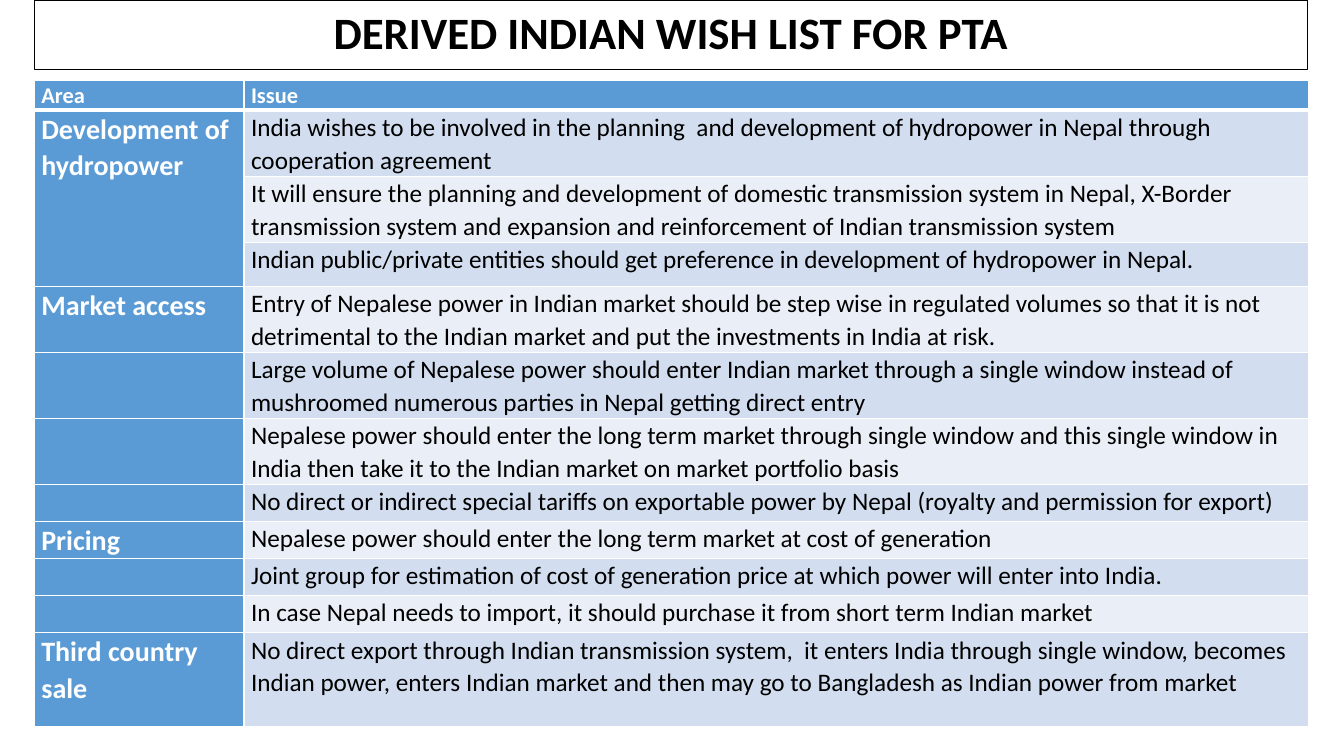
from lxml import etree
from pptx import Presentation
from pptx import util as u
from pptx.dml.color import RGBColor
from pptx.enum import shapes, text
from pptx.oxml import ns

WISHES = [
    ("Development of\nhydropower", [
        "India wishes to be involved in the planning  and development of hydropower in Nepal "
        "through cooperation agreement",
        "It will ensure the planning and development of domestic transmission system in Nepal, "
        "X-Border transmission system and expansion and reinforcement of Indian transmission system",
        "Indian public/private entities should get preference in development of hydropower in Nepal.",
    ]),
    ("Market access", [
        "Entry of Nepalese power in Indian market should be step wise in regulated volumes so that "
        "it is not detrimental to the Indian market and put the investments in India at risk.",
        "Large volume of Nepalese power should enter Indian market through a single window instead "
        "of mushroomed numerous parties in Nepal getting direct entry",
        "Nepalese power should enter the long term market through single window and this single "
        "window in India then take it to the Indian market on market portfolio basis",
        "No direct or indirect special tariffs on exportable power by Nepal "
        "(royalty and permission for export)",
    ]),
    ("Pricing", [
        "Nepalese power should enter the long term market at cost of generation",
        "Joint group for estimation of cost of generation price at which power will enter into India.",
        "In case Nepal needs to import, it should purchase it from short term Indian market",
    ]),
    ("Third country sale", [
        "No direct export through Indian transmission system,  it enters India through single window, "
        "becomes Indian power, enters Indian market and then may go to Bangladesh as Indian power "
        "from market",
    ]),
]
MERGED_AREA = WISHES[0][0]
COLUMN_WIDTHS = [2.08, 10.56]
ROW_HEIGHTS = [0.28, 0.66, 0.65, 0.44, 0.65, 0.65, 0.66, 0.36, 0.37, 0.37, 0.37, 0.93]
BLUE, BANDS = "5B9BD5", ["D2DEEF", "EAEFF7"]
WHITE, BLACK = "FFFFFF", "000000"


def rgb(value):
    return RGBColor.from_string(value)


class WishListSlide:
    font_name = "Calibri"
    cell_format = {
        "margin_left": u.Inches(0.07), "margin_right": u.Inches(0.07),
        "margin_top": 0, "margin_bottom": 0,
    }
    heading_format = {"size": u.Pt(16), "bold": True}
    area_format = {"size": u.Pt(20), "bold": True}
    issue_format = {"size": u.Pt(18), "bold": False}
    title_format = {"size": u.Pt(32), "bold": True}

    def __init__(self, deck):
        self.slide = deck.slides.add_slide(deck.slide_layouts[6])

    def set_words(self, frame, words, color, font_format, spacing, align=text.PP_ALIGN.LEFT):
        frame.text = words
        for paragraph in frame.paragraphs:
            paragraph.line_spacing = spacing
            paragraph.alignment = align
            for run in paragraph.runs:
                run.font.name = self.font_name
                run.font.color.rgb = rgb(color)
                for name, value in font_format.items():
                    setattr(run.font, name, value)

    def title(self, words, left, top, width, height):
        banner = self.slide.shapes.add_shape(
            shapes.MSO_SHAPE.RECTANGLE, *map(u.Inches, (left, top, width, height)))
        banner.shadow.inherit = False
        banner.fill.background()
        banner.line.color.rgb = rgb(BLACK)
        banner.line.width = u.Pt(0.75)
        banner.text_frame.vertical_anchor = text.MSO_ANCHOR.MIDDLE
        self.set_words(banner.text_frame, words, BLACK, self.title_format, 0.9,
                       text.PP_ALIGN.CENTER)

    def borders(self, cell, bottom):
        properties = cell._tc.get_or_add_tcPr()
        for side, points in (("L", 1), ("R", 1), ("T", 1), ("B", bottom)):
            edge = etree.SubElement(properties, ns.qn(f"a:ln{side}"), w=str(u.Pt(points)))
            fill = etree.SubElement(edge, ns.qn("a:solidFill"))
            etree.SubElement(fill, ns.qn("a:srgbClr"), val=WHITE)

    def cell(self, cell, words, fill, color, font_format, bottom=1):
        for name, value in self.cell_format.items():
            setattr(cell, name, value)
        self.borders(cell, bottom)
        cell.fill.solid()
        cell.fill.fore_color.rgb = rgb(fill)
        self.set_words(cell.text_frame, words, color, font_format, 1.07)

    def table(self, left, top):
        size = sum(COLUMN_WIDTHS), sum(ROW_HEIGHTS)
        table = self.slide.shapes.add_table(
            len(ROW_HEIGHTS), len(COLUMN_WIDTHS), *map(u.Inches, (left, top, *size))).table
        for column, width in zip(table.columns, COLUMN_WIDTHS):
            column.width = u.Inches(width)
        for row, height in zip(table.rows, ROW_HEIGHTS):
            row.height = u.Inches(height)

        for column, heading in enumerate(["Area", "Issue"]):
            self.cell(table.cell(0, column), heading, BLUE, WHITE, self.heading_format, bottom=3)
        row = 1
        for area, issues in WISHES:
            for offset, issue in enumerate(issues):
                self.cell(table.cell(row + offset, 0), "" if offset else area,
                          BLUE, WHITE, self.area_format)
                self.cell(table.cell(row + offset, 1), issue,
                          BANDS[(row + offset - 1) % 2], BLACK, self.issue_format)
            if area == MERGED_AREA:
                table.cell(row, 0).merge(table.cell(row + len(issues) - 1, 0))
            row += len(issues)


def main():
    deck = Presentation()
    deck.slide_width, deck.slide_height = u.Inches(13.33), u.Inches(7.5)
    slide = WishListSlide(deck)
    slide.title("DERIVED INDIAN WISH LIST FOR PTA", 0.34, 0, 12.63, 0.69)
    slide.table(0.34, 0.8)
    deck.save("out.pptx")


if __name__ == "__main__":
    main()
